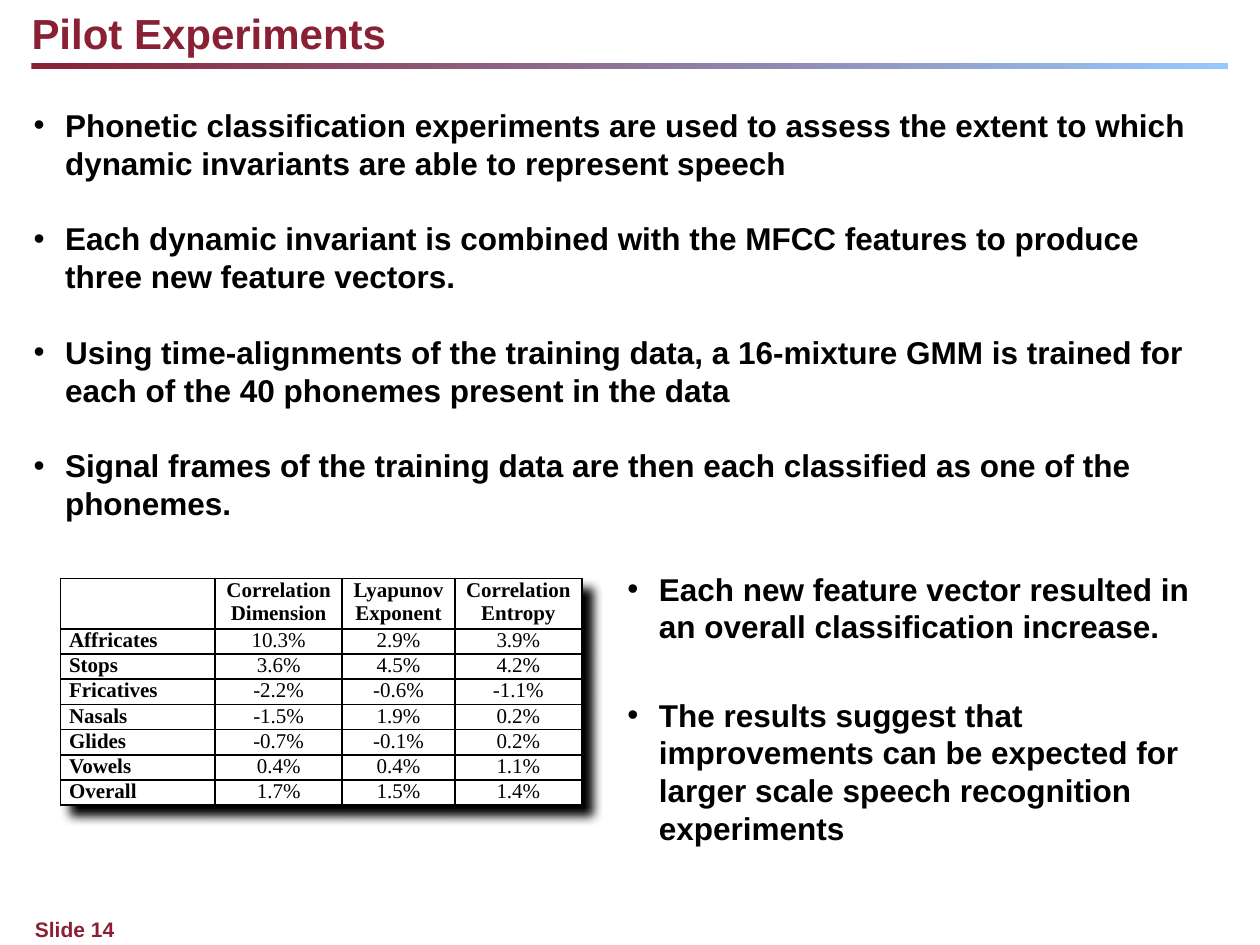
from lxml.etree import SubElement
from pptx import Presentation
from pptx.dml.color import RGBColor
from pptx.enum.shapes import MSO_SHAPE
from pptx.enum.text import MSO_ANCHOR, MSO_AUTO_SIZE, PP_ALIGN
from pptx.oxml import parse_xml
from pptx.oxml.ns import nsdecls, qn
from pptx.util import Pt

COLORS = {"maroon": "892034", "sky": "95CAFF", "black": "000000", "white": "FFFFFF"}
TITLE = "Pilot Experiments"
FOOTER = "Slide 14"
METHOD = [
    "Phonetic classification experiments are used to assess the extent to which dynamic invariants are able to represent speech",
    "Each dynamic invariant is combined with the MFCC features to produce three new feature vectors.",
    "Using time-alignments of the training data, a 16-mixture GMM is trained for each of the 40 phonemes present in the data",
    "Signal frames of the training data are then each classified as one of the phonemes.",
]
FINDINGS = [
    "Each new feature vector resulted in an overall classification increase.",
    "The results suggest that improvements can be expected for larger scale speech recognition experiments",
]
RESULTS = [
    ("", "Correlation\nDimension", "Lyapunov Exponent", "Correlation\nEntropy"),
    ("Affricates", "10.3%", "2.9%", "3.9%"),
    ("Stops", "3.6%", "4.5%", "4.2%"),
    ("Fricatives", "-2.2%", "-0.6%", "-1.1%"),
    ("Nasals", "-1.5%", "1.9%", "0.2%"),
    ("Glides", "-0.7%", "-0.1%", "0.2%"),
    ("Vowels", "0.4%", "0.4%", "1.1%"),
    ("Overall", "1.7%", "1.5%", "1.4%"),
]
COLUMN_WIDTHS = [88.5, 72.5, 64.5, 72.5]
HEADER_HEIGHT, ROW_HEIGHT = 28.8, 14.4
LINE_FACTOR = 1.2
BULLET_INDENT = 18


def set_values(target, values):
    for name, value in values.items():
        setattr(target, name, value)


def rgb(name):
    return RGBColor.from_string(COLORS[name])


def place(shape, left, top, width, height):
    set_values(shape, {"left": Pt(left), "top": Pt(top), "width": Pt(width), "height": Pt(height)})


def style_runs(paragraph, size, color="black", bold=True, name="Arial"):
    for run in paragraph.runs:
        set_values(run.font, {"size": Pt(size), "bold": bold, "name": name})
        run.font.color.rgb = rgb(color)


def fill_text(shape, texts, size, color, inset=(0, 0), gap=0, bulleted=False):
    frame = shape.text_frame
    set_values(frame, {
        "word_wrap": True, "auto_size": MSO_AUTO_SIZE.NONE, "vertical_anchor": MSO_ANCHOR.TOP,
        "margin_left": Pt(inset[0]), "margin_right": Pt(inset[0]),
        "margin_top": Pt(inset[1]), "margin_bottom": Pt(inset[1]),
    })
    frame.text = "\n".join(texts)
    for index, paragraph in enumerate(frame.paragraphs):
        if bulleted:
            properties = paragraph._p.get_or_add_pPr()
            properties.set("marL", str(Pt(BULLET_INDENT)))
            properties.set("indent", str(-Pt(BULLET_INDENT)))
            SubElement(properties, qn("a:buChar"), char="•")
        set_values(paragraph, {
            "alignment": PP_ALIGN.LEFT, "line_spacing": Pt(size * LINE_FACTOR),
            "space_before": Pt(gap if index else 0), "space_after": Pt(0),
        })
        style_runs(paragraph, size, color)


def add_borders(cell):
    properties = cell._tc.get_or_add_tcPr()
    for position, side in enumerate(("lnL", "lnR", "lnT", "lnB")):
        properties.insert(position, parse_xml(
            f'<a:{side} {nsdecls("a")} w="{Pt(1)}"><a:solidFill>'
            f'<a:srgbClr val="{COLORS["black"]}"/></a:solidFill></a:{side}>'))


def add_results(slide):
    height = HEADER_HEIGHT + ROW_HEIGHT * (len(RESULTS) - 1)
    table = slide.shapes.add_table(
        len(RESULTS), len(COLUMN_WIDTHS), Pt(34.5), Pt(330.5), Pt(sum(COLUMN_WIDTHS)), Pt(height)).table
    set_values(table, {"first_row": False, "horz_banding": False})
    table._tbl.tblPr.insert(0, parse_xml(
        f'<a:effectLst {nsdecls("a")}><a:outerShdw blurRad="{Pt(6)}" dist="{Pt(8)}" dir="2700000">'
        f'<a:srgbClr val="{COLORS["black"]}"/></a:outerShdw></a:effectLst>'))
    for column, width in zip(table.columns, COLUMN_WIDTHS):
        column.width = Pt(width)
    for row_index, values in enumerate(RESULTS):
        table.rows[row_index].height = Pt(ROW_HEIGHT if row_index else HEADER_HEIGHT)
        for column_index, value in enumerate(values):
            cell = table.cell(row_index, column_index)
            set_values(cell, {"margin_left": Pt(5), "margin_right": Pt(5), "margin_top": 0, "margin_bottom": 0})
            cell.text = value
            cell.fill.solid()
            cell.fill.fore_color.rgb = rgb("white")
            add_borders(cell)
            for paragraph in cell.text_frame.paragraphs:
                paragraph.alignment = PP_ALIGN.CENTER if column_index else PP_ALIGN.LEFT
                style_runs(paragraph, 12, bold=row_index == 0 or column_index == 0, name="Times New Roman")


def add_rule(slide):
    rule = slide.shapes.add_shape(MSO_SHAPE.RECTANGLE, Pt(18), Pt(36), Pt(684), Pt(3.6))
    rule.shadow.inherit = False
    rule.line.fill.background()
    rule.fill.gradient()
    rule.fill.gradient_angle = 0
    for stop, color in zip(rule.fill.gradient_stops, ("maroon", "sky")):
        stop.color.rgb = rgb(color)


def main():
    """Build the pilot experiments slide."""
    presentation = Presentation()
    set_values(presentation, {"slide_width": Pt(720), "slide_height": Pt(540)})
    slide = presentation.slides.add_slide(presentation.slide_layouts[3])
    title, method, findings = slide.placeholders
    add_rule(slide)

    place(title, 18, 4.3, 540, 28.8)
    fill_text(title, [TITLE], 24, "maroon")
    place(method, 12, 57, 687, 386)
    fill_text(method, METHOD, 18, "black", inset=(7.2, 3.6), gap=21.6, bulleted=True)
    add_results(slide)
    place(findings, 358.5, 325.5, 332.5, 161.5)
    fill_text(findings, FINDINGS, 18, "black", gap=28.8, bulleted=True)

    footer = slide.shapes.add_textbox(Pt(20), Pt(523.5), Pt(662.5), Pt(14.4))
    fill_text(footer, [FOOTER], 12, "maroon")
    presentation.save("out.pptx")


if __name__ == "__main__":
    main()
